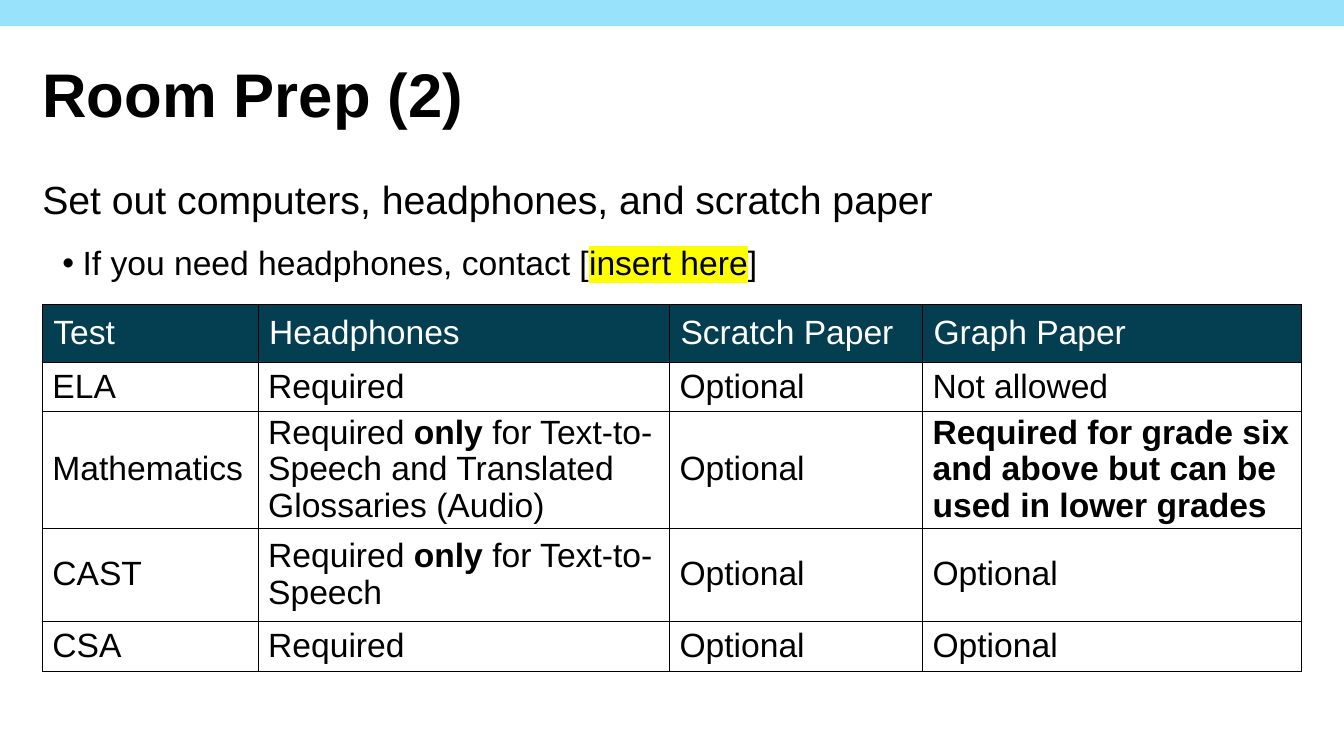
"""Build the Room Prep slide with its table of test materials."""
from dataclasses import dataclass

from lxml import etree
from pptx import Presentation, util as u
from pptx.dml.color import RGBColor
from pptx.enum import shapes, text
from pptx.oxml import ns

PX = 9144
FONT = "Arial"
BLACK, WHITE, SKY, TEAL, YELLOW = "000000", "FFFFFF", "98E3FB", "033E51", "FFFF00"
COLUMNS = (214, 408, 251, 376)
ROWS = (58, 48, 110, 92, 50)


@dataclass(frozen=True)
class Span:
    """A stretch of text with one look."""
    words: str
    bold: bool = False
    highlight: str = ""


@dataclass(frozen=True)
class Line:
    """A paragraph and its style."""
    spans: tuple[Span, ...]
    size: int = 24
    color: str = BLACK
    bold: bool = False
    spacing: float = 0.97
    before: int = 0
    after: int = 0
    bullet: bool = False


@dataclass(frozen=True)
class Block:
    """A text box and its lines."""
    left: int
    top: int
    width: int
    height: int
    anchor: text.MSO_ANCHOR
    lines: tuple[Line, ...]


def plain(words: str, bold: bool = False) -> Line:
    """Return a table line in one style."""
    return Line((Span(words),), bold=bold)


def only_for(purpose: str) -> Line:
    """Return a line that stresses a single purpose."""
    return Line((Span("Required "), Span("only", bold=True), Span(f" for {purpose}")))


BLOCKS = (
    Block(42, 26, 823, 128, text.MSO_ANCHOR.MIDDLE, (
        Line((Span("Room Prep (2)"),), 44, bold=True, spacing=1.07),
    )),
    Block(42, 171, 1250, 115, text.MSO_ANCHOR.TOP, (
        Line((Span("Set out computers, headphones, and scratch paper"),), 28,
             spacing=1.07, after=6),
        Line((Span("If you need headphones, contact ["),
              Span("insert here", highlight=YELLOW), Span("]")),
             spacing=1.07, before=6, after=6, bullet=True),
    )),
)
HEADERS = tuple(Line((Span(name),), color=WHITE) for name in
                ("Test", "Headphones", "Scratch Paper", "Graph Paper"))
OPTIONAL = plain("Optional")
REQUIRED = plain("Required")
TESTS = (
    (plain("ELA"), REQUIRED, OPTIONAL, plain("Not allowed")),
    (plain("Mathematics"),
     only_for("Text-to-Speech and Translated Glossaries (Audio)"), OPTIONAL,
     plain("Required for grade six and above but can be used in lower grades", True)),
    (plain("CAST"), only_for("Text-to-Speech"), OPTIONAL, OPTIONAL),
    (plain("CSA"), REQUIRED, OPTIONAL, OPTIONAL),
)


def px(length: int) -> u.Emu:
    """Turn px into EMU."""
    return u.Emu(length * PX)


def rgb(value: str) -> RGBColor:
    """Turn a hex string into a colour."""
    return RGBColor.from_string(value)


def add_color(parent, tag: str, value: str) -> None:
    """Add a colour-holding element to an XML parent."""
    holder = etree.SubElement(parent, ns.qn(tag))
    etree.SubElement(holder, ns.qn("a:srgbClr"), val=value)


def set_margins(target, side: int, edge: int) -> None:
    """Set the insets of a text frame or cell."""
    target.margin_left = target.margin_right = px(side)
    target.margin_top = target.margin_bottom = px(edge)


def write_line(para, line: Line) -> None:
    """Fill a paragraph with a styled line."""
    para.line_spacing = line.spacing
    para.space_before, para.space_after = u.Pt(line.before), u.Pt(line.after)
    if line.bullet:
        properties = para._p.get_or_add_pPr()
        properties.set("marL", str(px(40)))
        properties.set("indent", str(px(-20)))
        etree.SubElement(properties, ns.qn("a:buFont"), typeface=FONT)
        etree.SubElement(properties, ns.qn("a:buChar"), char="•")
    font = para.font
    font.name, font.size, font.bold = FONT, u.Pt(line.size), line.bold
    font.color.rgb = rgb(line.color)
    for span in line.spans:
        run = para.add_run()
        run.text = span.words
        if span.bold:
            run.font.bold = True
        if span.highlight:
            add_color(run._r.get_or_add_rPr(), "a:highlight", span.highlight)


def add_block(page, block: Block) -> None:
    """Draw a text box."""
    box = page.shapes.add_textbox(px(block.left), px(block.top),
                                  px(block.width), px(block.height))
    frame = box.text_frame
    frame.word_wrap = True
    frame.vertical_anchor = block.anchor
    set_margins(frame, 0, 0)
    for index, line in enumerate(block.lines):
        write_line(frame.add_paragraph() if index else frame.paragraphs[0], line)


def add_borders(cell) -> None:
    """Outline a cell with thin black lines."""
    properties = cell._tc.get_or_add_tcPr()
    for index, side in enumerate(("a:lnL", "a:lnR", "a:lnT", "a:lnB")):
        border = etree.Element(ns.qn(side), w=str(u.Pt(1)))
        add_color(border, "a:solidFill", BLACK)
        properties.insert(index, border)


def add_tests(page) -> None:
    """Draw the table of tests and materials."""
    grid = page.shapes.add_table(len(ROWS), len(COLUMNS), px(42), px(302),
                                 px(sum(COLUMNS)), px(sum(ROWS))).table
    grid.first_row = grid.horz_banding = False
    for column, width in zip(grid.columns, COLUMNS):
        column.width = px(width)
    for row, height in zip(grid.rows, ROWS):
        row.height = px(height)
    for row, lines in enumerate((HEADERS, *TESTS)):
        for column, line in enumerate(lines):
            cell = grid.cell(row, column)
            cell.vertical_anchor = text.MSO_ANCHOR.MIDDLE
            if row:
                set_margins(cell, 10, 0)
                cell.fill.background()
            else:
                set_margins(cell, 11, 5)
                cell.fill.solid()
                cell.fill.fore_color.rgb = rgb(TEAL)
            add_borders(cell)
            write_line(cell.text_frame.paragraphs[0], line)


def main() -> None:
    """Build and save the deck."""
    deck = Presentation()
    deck.slide_width, deck.slide_height = px(1333), px(750)
    page = deck.slides.add_slide(deck.slide_layouts[6])
    band = page.shapes.add_shape(shapes.MSO_SHAPE.RECTANGLE, 0, 0, px(1333), px(26))
    band.shadow.inherit = False
    band.fill.solid()
    band.fill.fore_color.rgb = rgb(SKY)
    band.line.fill.background()
    for block in BLOCKS:
        add_block(page, block)
    add_tests(page)
    deck.save("out.pptx")


if __name__ == "__main__":
    main()
